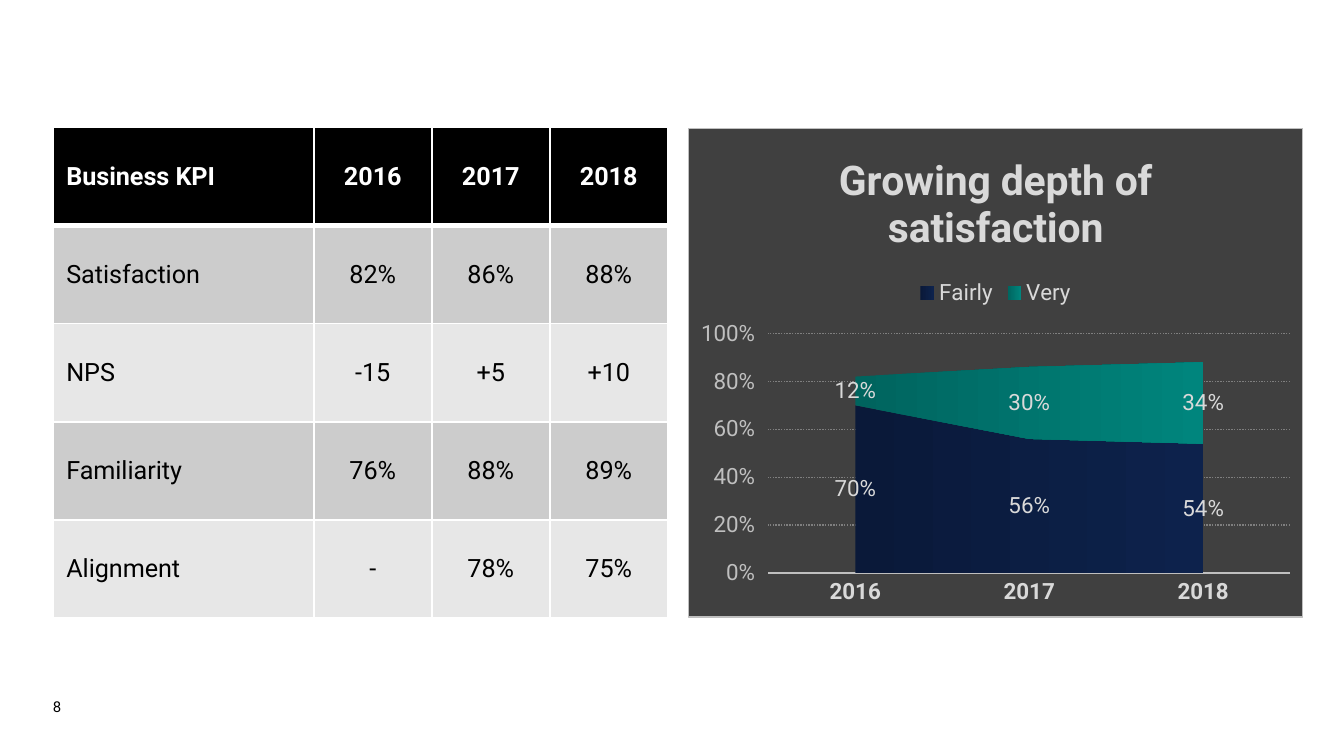
from dataclasses import dataclass

from pptx import Presentation
from pptx.chart.data import CategoryChartData
from pptx.dml.color import RGBColor
from pptx.enum.chart import XL_CHART_TYPE, XL_LEGEND_POSITION, XL_TICK_MARK
from pptx.enum.dml import MSO_LINE
from pptx.enum.text import MSO_ANCHOR, PP_ALIGN
from pptx.oxml import parse_xml
from pptx.oxml.ns import nsdecls, qn
from pptx.util import Cm, Pt

YEARS = ["2016", "2017", "2018"]
KPI_ROWS = [
    ["Business KPI", *YEARS],
    ["Satisfaction", "82%", "86%", "88%"],
    ["NPS", "-15", "+5", "+10"],
    ["Familiarity", "76%", "88%", "89%"],
    ["Alignment", "-", "78%", "75%"],
]
CHART_TITLE = "Growing depth of satisfaction"
# name, values, gradient from left to right
SATISFACTION = [
    ("Fairly", (0.70, 0.56, 0.54), ("0A1939", "0D224C")),
    ("Very", (0.12, 0.30, 0.34), ("00645E", "00857D")),
]
PAGE_NUMBER = "8"


@dataclass(frozen=True)
class Theme:
    font: str = "Roboto"
    black: str = "000000"
    white: str = "FFFFFF"
    bands: tuple = ("CCCCCC", "E7E7E7")
    panel: str = "404040"
    light: str = "D9D9D9"
    axis: str = "BFBFBF"
    grid: str = "7F7F7F"
    number_size: float = 8
    table_size: float = 13.5
    chart_size: float = 12
    title_size: float = 22


THEME = Theme()
LEFT, TOP = Cm(1), Cm(2.41)
LABEL_WIDTH, YEAR_WIDTH = Cm(4.93), Cm(2.23)
ROW_HEIGHT = Cm(1.854)
TABLE_WIDTH = LABEL_WIDTH + YEAR_WIDTH * len(YEARS)
BLOCK_HEIGHT = ROW_HEIGHT * len(KPI_ROWS)
CHART_LEFT, CHART_WIDTH = Cm(13), Cm(11.63)


def style_font(font, size, color, bold=False):
    font.name, font.size, font.bold = THEME.font, Pt(size), bold
    font.color.rgb = RGBColor.from_string(color)


def set_borders(cell, widths):
    """Draw white borders; widths maps L, R, T, B to points."""
    properties = cell._tc.get_or_add_tcPr()
    for side, width in widths.items():
        properties.append(parse_xml(
            f'<a:ln{side} {nsdecls("a")} w="{Pt(width)}"><a:solidFill>'
            f'<a:srgbClr val="{THEME.white}"/></a:solidFill></a:ln{side}>'))


def add_kpi_table(slide):
    table = slide.shapes.add_table(
        len(KPI_ROWS), len(KPI_ROWS[0]), LEFT, TOP, TABLE_WIDTH, BLOCK_HEIGHT).table
    table.horz_banding = False
    for index, column in enumerate(table.columns):
        column.width = YEAR_WIDTH if index else LABEL_WIDTH
    for row_index, row in enumerate(KPI_ROWS):
        table.rows[row_index].height = ROW_HEIGHT
        header = row_index == 0
        fill = THEME.black if header else THEME.bands[(row_index - 1) % 2]
        for column_index, text in enumerate(row):
            cell = table.cell(row_index, column_index)
            cell.text = text
            cell.vertical_anchor = MSO_ANCHOR.MIDDLE
            set_borders(cell, {"L": 1, "R": 1, "T": 3 if row_index == 1 else 1,
                               "B": 3 if header else 1})
            cell.fill.solid()
            cell.fill.fore_color.rgb = RGBColor.from_string(fill)
            paragraph = cell.text_frame.paragraphs[0]
            paragraph.alignment = PP_ALIGN.CENTER if column_index else PP_ALIGN.LEFT
            style_font(paragraph.font, THEME.table_size,
                       THEME.white if header else THEME.black, header)


def fill_panel(chart):
    """Give the chart area its dark fill and thin border."""
    chart.element.find(qn("c:chart")).addnext(parse_xml(
        f'<c:spPr {nsdecls("c", "a")}>'
        f'<a:solidFill><a:srgbClr val="{THEME.panel}"/></a:solidFill>'
        f'<a:ln w="{Pt(0.75)}"><a:solidFill><a:srgbClr val="{THEME.axis}"/>'
        '</a:solidFill></a:ln></c:spPr>'))


def place_plot(chart, x, y, width, height):
    """Fix the inner plot area, in fractions of the chart."""
    plot_area = chart.element.find(f'{qn("c:chart")}/{qn("c:plotArea")}')
    for layout in plot_area.findall(qn("c:layout")):
        plot_area.remove(layout)
    plot_area.insert(0, parse_xml(
        f'<c:layout {nsdecls("c")}><c:manualLayout><c:layoutTarget val="inner"/>'
        '<c:xMode val="edge"/><c:yMode val="edge"/>'
        f'<c:x val="{x}"/><c:y val="{y}"/><c:w val="{width}"/><c:h val="{height}"/>'
        '</c:manualLayout></c:layout>'))


def format_axes(chart):
    years = chart.category_axis
    years.major_tick_mark = years.minor_tick_mark = XL_TICK_MARK.NONE
    years.has_major_gridlines = False
    years.format.line.width = Pt(0.75)
    years.format.line.color.rgb = RGBColor.from_string(THEME.axis)
    style_font(years.tick_labels.font, THEME.chart_size, THEME.light, True)

    share = chart.value_axis
    share.minimum_scale, share.maximum_scale, share.major_unit = 0, 1, 0.2
    share.major_tick_mark = XL_TICK_MARK.OUTSIDE
    share.format.line.fill.background()
    share.tick_labels.number_format = "0%"
    share.tick_labels.number_format_is_linked = False
    style_font(share.tick_labels.font, THEME.chart_size, THEME.axis)
    share.has_major_gridlines = True
    grid = share.major_gridlines.format.line
    grid.width, grid.dash_style = Pt(0.75), MSO_LINE.ROUND_DOT
    grid.color.rgb = RGBColor.from_string(THEME.grid)
    # Leave half a category free at both ends of the areas
    for crossing in chart.element.iter(qn("c:crossBetween")):
        crossing.set("val", "between")


def add_satisfaction_chart(slide):
    data = CategoryChartData(number_format="0%")
    data.categories = YEARS
    for name, values, _ in SATISFACTION:
        data.add_series(name, values)
    chart = slide.shapes.add_chart(
        XL_CHART_TYPE.AREA_STACKED, CHART_LEFT, TOP, CHART_WIDTH, BLOCK_HEIGHT, data).chart
    style_font(chart.font, THEME.chart_size, THEME.light)
    fill_panel(chart)

    chart.has_title = True
    chart.chart_title.include_in_layout = False
    title = chart.chart_title.text_frame
    title.text = CHART_TITLE
    style_font(title.paragraphs[0].font, THEME.title_size, THEME.light, True)

    chart.has_legend = True
    chart.legend.position = XL_LEGEND_POSITION.TOP
    chart.legend.include_in_layout = False
    style_font(chart.legend.font, THEME.chart_size, THEME.light)

    format_axes(chart)
    chart.plots[0].vary_by_categories = False
    for series, (_, _, gradient) in zip(chart.plots[0].series, SATISFACTION):
        area = series.format.fill
        area.gradient()
        area.gradient_angle = 0
        for stop, color in zip(area.gradient_stops, gradient):
            stop.color.rgb = RGBColor.from_string(color)
        labels = series.data_labels
        labels.show_value = True
        labels.number_format, labels.number_format_is_linked = "0%", False
        style_font(labels.font, THEME.chart_size, THEME.light)
    place_plot(chart, 0.13, 0.42, 0.85, 0.49)


def add_page_number(slide):
    frame = slide.shapes.add_textbox(LEFT, Cm(12.85), Cm(0.56), Cm(1)).text_frame
    frame.margin_left = frame.margin_right = frame.margin_top = frame.margin_bottom = 0
    frame.word_wrap = True
    frame.vertical_anchor = MSO_ANCHOR.MIDDLE
    frame.text = PAGE_NUMBER
    style_font(frame.paragraphs[0].font, THEME.number_size, THEME.black)


def main():
    deck = Presentation()
    deck.slide_width, deck.slide_height = Cm(25.4), Cm(14.29)
    slide = deck.slides.add_slide(deck.slide_layouts[6])
    add_page_number(slide)
    add_kpi_table(slide)
    add_satisfaction_chart(slide)
    deck.save("out.pptx")


if __name__ == "__main__":
    main()
